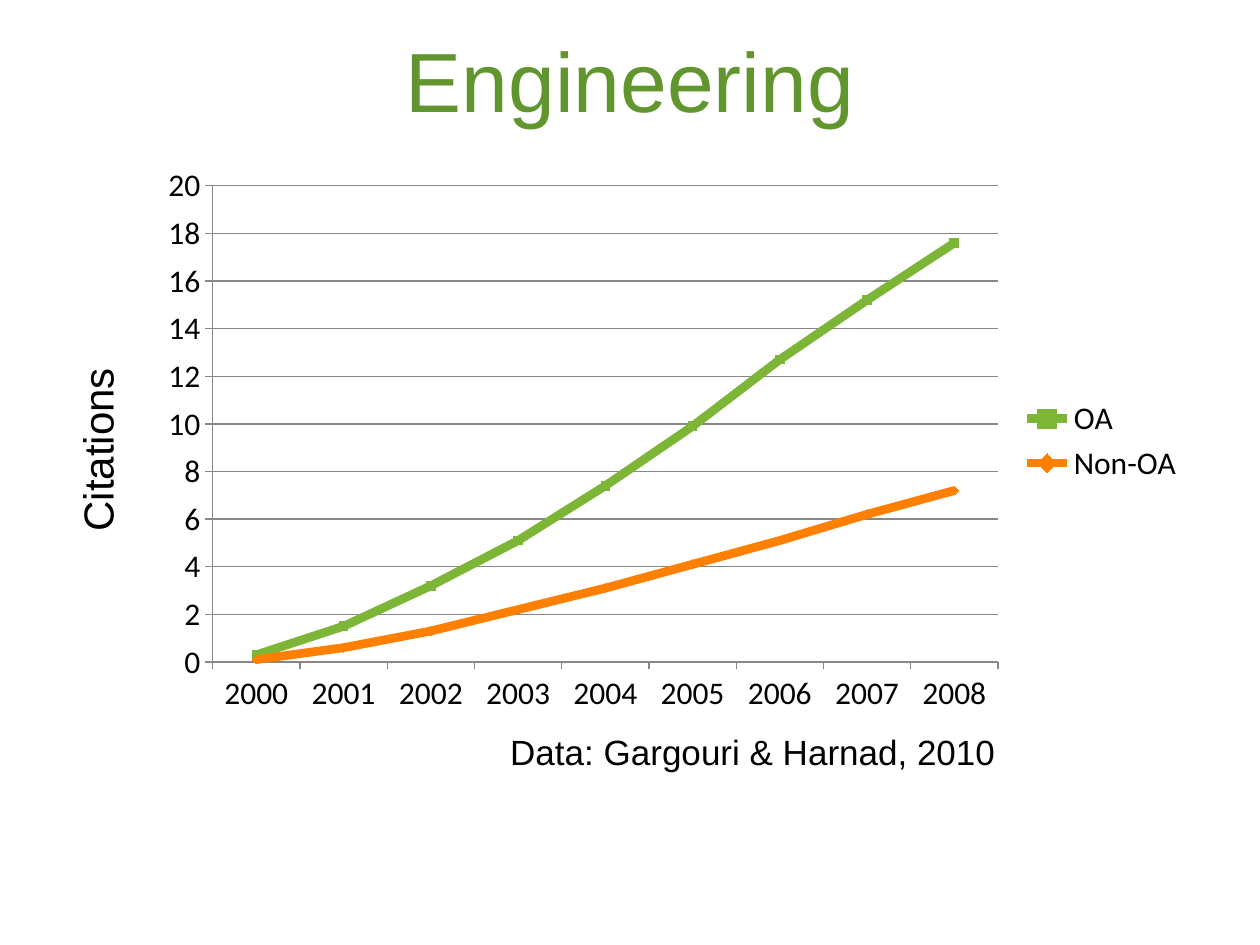
from lxml.etree import SubElement
from pptx import Presentation
from pptx.chart.data import CategoryChartData
from pptx.dml.color import RGBColor
from pptx.enum.chart import XL_CHART_TYPE, XL_LEGEND_POSITION, XL_MARKER_STYLE, XL_TICK_MARK
from pptx.enum.text import MSO_ANCHOR, PP_ALIGN
from pptx.oxml.ns import qn
from pptx.util import Inches, Pt

COLORS = {
    "title": "61952D",
    "text": "000000",
    "axis": "878787",
    "OA": "7DB536",
    "Non-OA": "FF8000",
}


def rgb(name):
    return RGBColor.from_string(COLORS[name])


def add_label(slide, box, text, size, align):
    tb = slide.shapes.add_textbox(*[Inches(v) for v in box])
    tf = tb.text_frame
    tf.word_wrap = True
    p = tf.paragraphs[0]
    p.text = text
    p.alignment = align
    p.font.name = "Arial"
    p.font.size = Pt(size)
    p.font.color.rgb = rgb("text")
    return tf


prs = Presentation()
prs.slide_width, prs.slide_height = Inches(10), Inches(7.5)
s = prs.slides.add_slide(prs.slide_layouts[5])

# Title
title = s.shapes.title
title.left, title.top = Inches(0.5), Inches(0)
title.width, title.height = Inches(9), Inches(1.25)
title.text_frame.vertical_anchor = MSO_ANCHOR.MIDDLE
p = title.text_frame.paragraphs[0]
p.text = "Engineering"
p.alignment = PP_ALIGN.CENTER
p.font.name = "Arial"
p.font.size = Pt(48)
p.font.color.rgb = rgb("title")

# Citation chart
data = CategoryChartData()
data.categories = [str(year) for year in range(2000, 2009)]
data.add_series("OA", (0.3, 1.5, 3.2, 5.1, 7.4, 9.9, 12.7, 15.2, 17.6))
data.add_series("Non-OA", (0.1, 0.6, 1.3, 2.2, 3.1, 4.1, 5.1, 6.2, 7.2))
chart = s.shapes.add_chart(XL_CHART_TYPE.LINE_MARKERS, Inches(1.19), Inches(1.25),
                           Inches(8.31), Inches(4.5), data).chart
chart.has_title = False
chart.font.name = "Calibri"
chart.font.size = Pt(18)
chart.font.color.rgb = rgb("text")
chart.has_legend = True
chart.legend.position = XL_LEGEND_POSITION.RIGHT
chart.legend.include_in_layout = False

value_axis = chart.value_axis
value_axis.minimum_scale, value_axis.maximum_scale = 0, 20
value_axis.major_unit = 2
value_axis.has_major_gridlines = True
value_axis.tick_labels.number_format = "General"
value_axis.tick_labels.number_format_is_linked = False
for axis in (value_axis, chart.category_axis):
    axis.major_tick_mark = XL_TICK_MARK.OUTSIDE
    axis.format.line.color.rgb = rgb("axis")
value_axis.major_gridlines.format.line.color.rgb = rgb("axis")

plot = chart.plots[0]
plot.vary_by_categories = False
for series, style in zip(plot.series, (XL_MARKER_STYLE.SQUARE, XL_MARKER_STYLE.DIAMOND)):
    color = rgb(series.name)
    series.smooth = False
    series.format.line.color.rgb = color
    series.format.line.width = Pt(5)
    series.marker.style = style
    series.marker.size = 5
    series.marker.format.fill.solid()
    series.marker.format.fill.fore_color.rgb = color
    series.marker.format.line.color.rgb = color

# Fixed inner plot area, as fractions of the chart
plot_area = chart.element.chart.plotArea
for old in plot_area.findall(qn("c:layout")):
    plot_area.remove(old)
layout = SubElement(plot_area, qn("c:layout"))
plot_area.insert(0, layout)
manual = SubElement(layout, qn("c:manualLayout"))
for tag, value in (("layoutTarget", "inner"), ("xMode", "edge"), ("yMode", "edge"),
                   ("x", "0.06"), ("y", "0.05"), ("w", "0.75"), ("h", "0.84")):
    SubElement(manual, qn(f"c:{tag}")).set("val", value)

# Source line and rotated axis label
add_label(s, (3.5, 5.75, 4.5, 0.44), "Data: Gargouri & Harnad, 2010", 20, PP_ALIGN.RIGHT)
tf = add_label(s, (0.52, 2.08, 0.61, 2.98), "Citations", 24, PP_ALIGN.CENTER)
tf._txBody.bodyPr.set("vert", "vert270")

prs.save("out.pptx")
